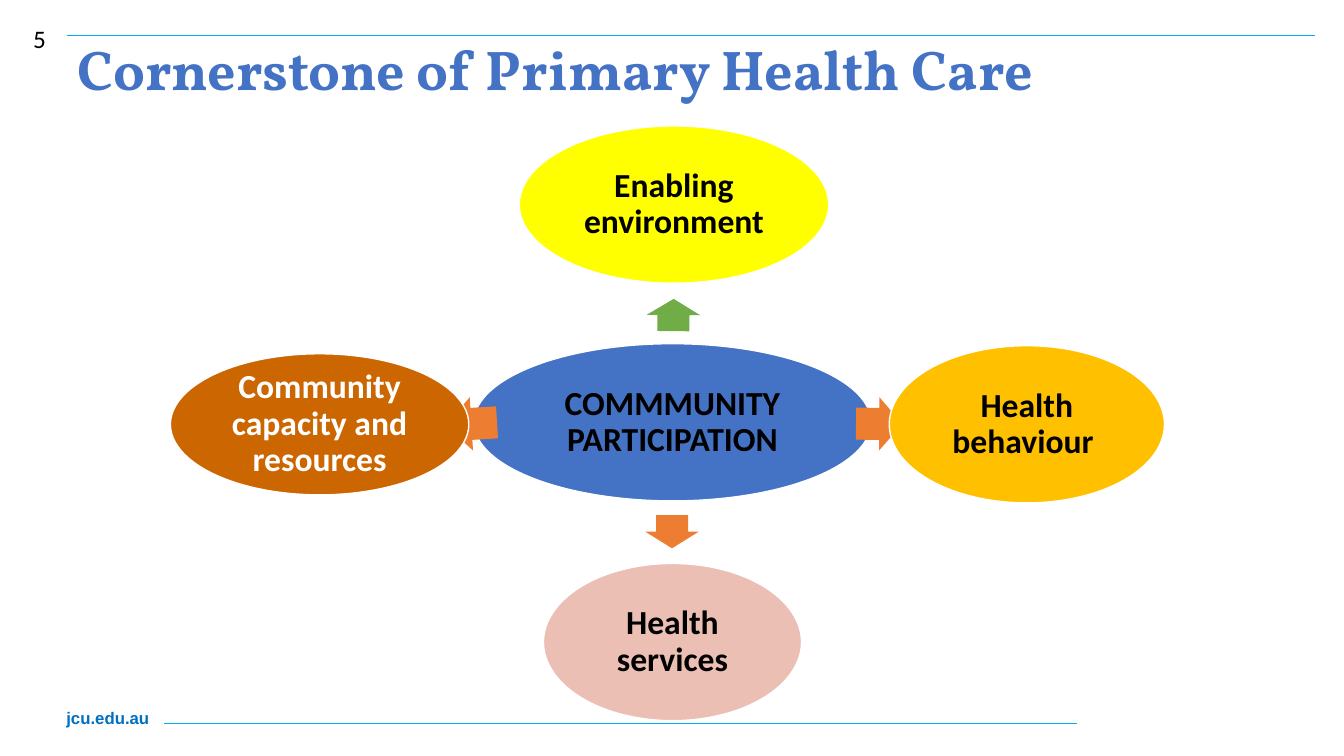
from dataclasses import dataclass

from lxml import etree
from pptx import Presentation
from pptx.dml.color import RGBColor
from pptx.enum.shapes import MSO_CONNECTOR as Connector, MSO_SHAPE as Preset
from pptx.enum.text import MSO_ANCHOR as Anchor, PP_ALIGN as Align
from pptx.oxml.ns import qn
from pptx.util import Inches, Pt


@dataclass(frozen=True)
class Theme:
    blue: str = "4472C4"
    green: str = "70AD47"
    orange: str = "ED7D31"
    yellow: str = "FFFF00"
    gold: str = "FFC000"
    pink: str = "EBBFB3"
    brown: str = "CC6600"
    black: str = "000000"
    white: str = "FFFFFF"
    rule: str = "00B0F0"
    site: str = "0070C0"
    heading_font: str = "Vollkorn"
    body_font: str = "Calibri"
    site_font: str = "Arial"
    heading_size: int = 40
    oval_size: int = 24
    number_size: int = 18
    site_size: int = 12


@dataclass(frozen=True)
class Box:
    left: float
    top: float
    width: float
    height: float

    def inches(self):
        return (Inches(self.left), Inches(self.top),
                Inches(self.width), Inches(self.height))


@dataclass(frozen=True)
class Label:
    text: str
    box: Box
    font: str
    size: int
    color: str
    bold: bool = True
    spacing: float = 1.0


@dataclass(frozen=True)
class Oval:
    text: str
    box: Box
    fill: str
    color: str


@dataclass(frozen=True)
class Arrow:
    box: Box
    rotation: float
    fill: str


THEME = Theme()

LABELS = [
    Label("jcu.edu.au", Box(0.56, 6.97, 1.23, 0.3),
          THEME.site_font, THEME.site_size, THEME.site),
    Label("Cornerstone of Primary Health Care", Box(0.67, 0.37, 11.74, 1.21),
          THEME.heading_font, THEME.heading_size, THEME.blue, spacing=0.9),
    Label("5", Box(0.23, 0.18, 0.5, 0.37),
          THEME.body_font, THEME.number_size, THEME.black, bold=False),
]

# Rules as left end, right end and height on the slide
RULES = [(1.63, 10.68, 7.18), (0.66, 13.04, 0.35)]

HUB = Oval("COMMMUNITY PARTICIPATION", Box(4.7, 3.41, 3.94, 1.56),
           THEME.blue, THEME.black)

# Each arrow leads from the hub to the oval beside it
SPOKES = [
    (Arrow(Box(6.52, 2.86, 0.32, 0.53), 270.5, THEME.green),
     Oval("Enabling environment", Box(5.15, 1.25, 3.07, 1.56),
          THEME.yellow, THEME.black)),
    (Arrow(Box(8.49, 3.94, 0.46, 0.53), 0.3, THEME.orange),
     Oval("Health behaviour ", Box(8.82, 3.43, 2.73, 1.56),
          THEME.gold, THEME.black)),
    (Arrow(Box(6.5, 5.01, 0.33, 0.53), 90, THEME.orange),
     Oval("Health services", Box(5.39, 5.59, 2.56, 1.56),
          THEME.pink, THEME.black)),
    (Arrow(Box(4.42, 3.94, 0.51, 0.53), 176.5, THEME.orange),
     Oval("Community capacity and resources", Box(1.69, 3.51, 2.96, 1.4),
          THEME.brown, THEME.white)),
]


def rgb(color: str) -> RGBColor:
    return RGBColor.from_string(color)


def style(paragraph, font: str, size: int, color: str, bold: bool) -> None:
    paragraph.font.name = font
    paragraph.font.size = Pt(size)
    paragraph.font.bold = bold
    paragraph.font.color.rgb = rgb(color)


def add_label(slide, label: Label) -> None:
    frame = slide.shapes.add_textbox(*label.box.inches()).text_frame
    frame.word_wrap = True
    frame.text = label.text
    line = frame.paragraphs[0]
    line.line_spacing = label.spacing
    style(line, label.font, label.size, label.color, label.bold)


def add_rule(slide, left: float, right: float, height: float) -> None:
    rule = slide.shapes.add_connector(
        Connector.STRAIGHT, Inches(left), Inches(height),
        Inches(right), Inches(height))
    rule.line.color.rgb = rgb(THEME.rule)
    rule.line.width = Pt(0.5)
    etree.SubElement(rule._element.spPr, qn("a:effectLst"))


def add_filled(slide, preset: Preset, box: Box, fill: str):
    shape = slide.shapes.add_shape(preset, *box.inches())
    shape.shadow.inherit = False
    shape.fill.solid()
    shape.fill.fore_color.rgb = rgb(fill)
    return shape


def add_oval(slide, oval: Oval) -> None:
    shape = add_filled(slide, Preset.OVAL, oval.box, oval.fill)
    shape.line.color.rgb = rgb(THEME.white)
    shape.line.width = Pt(1)
    frame = shape.text_frame
    frame.word_wrap = True
    frame.vertical_anchor = Anchor.MIDDLE
    frame.margin_left = frame.margin_right = Inches(0.03)
    frame.margin_top = frame.margin_bottom = Inches(0.03)
    frame.text = oval.text
    caption = frame.paragraphs[0]
    caption.alignment = Align.CENTER
    caption.line_spacing = 0.9
    style(caption, THEME.body_font, THEME.oval_size, oval.color, True)


def add_arrow(slide, arrow: Arrow) -> None:
    shape = add_filled(slide, Preset.RIGHT_ARROW, arrow.box, arrow.fill)
    shape.line.fill.background()
    shape.adjustments[0] = 0.6
    shape.adjustments[1] = 0.5
    shape.rotation = arrow.rotation


def main() -> None:
    deck = Presentation()
    deck.slide_width, deck.slide_height = Inches(13.33), Inches(7.5)
    slide = deck.slides.add_slide(deck.slide_layouts[6])

    # Frame of the page: rules, heading, site and page number
    for rule in RULES:
        add_rule(slide, *rule)
    for label in LABELS:
        add_label(slide, label)

    # Hub with its four spokes
    add_oval(slide, HUB)
    for arrow, oval in SPOKES:
        add_arrow(slide, arrow)
        add_oval(slide, oval)

    deck.save("out.pptx")


if __name__ == "__main__":
    main()
